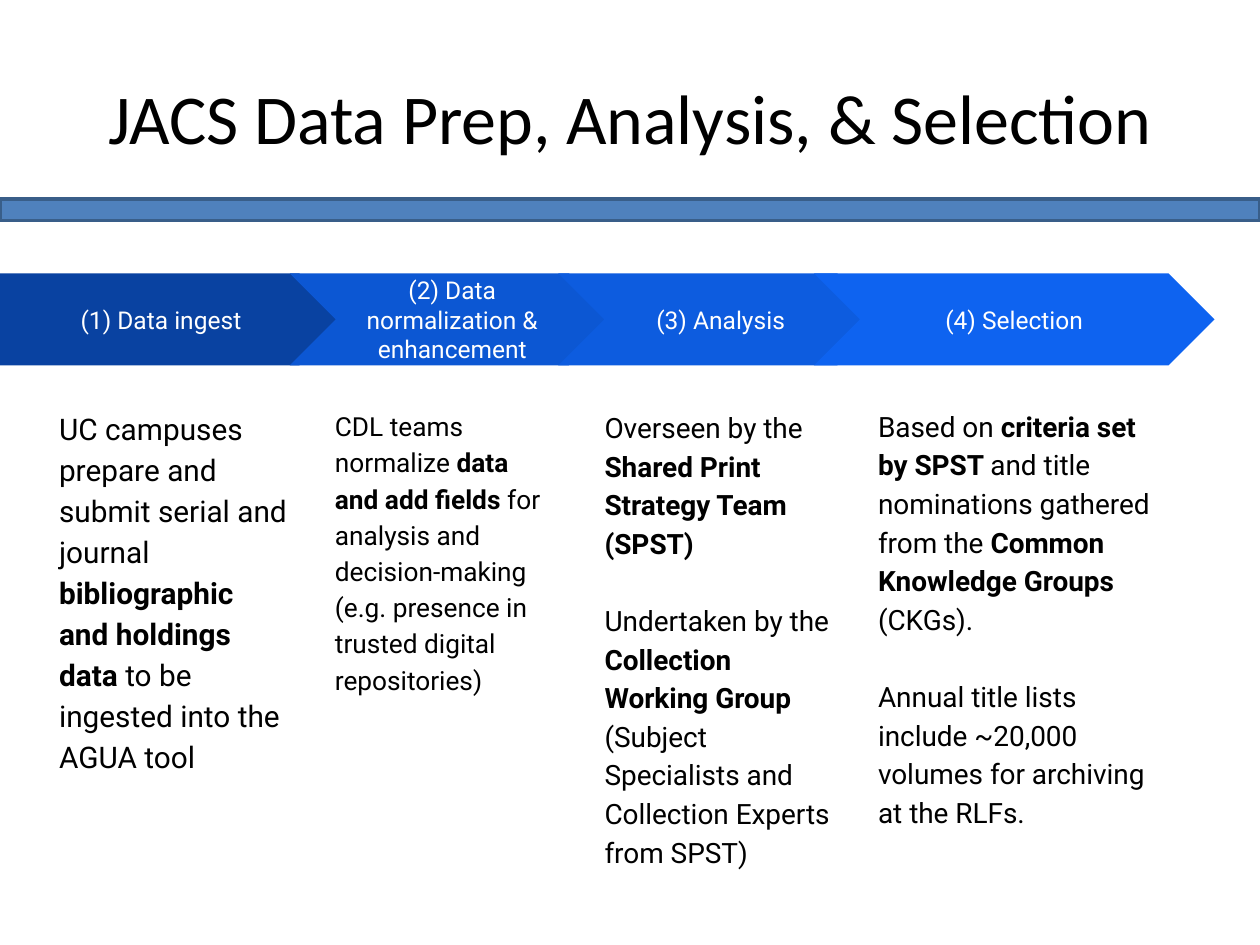
from pptx import Presentation
from pptx import util as u
from pptx.dml.color import RGBColor
from pptx.enum import shapes, text

THEME = {
    "title": {"name": "Calibri", "size": u.Pt(40), "color": "000000"},
    "step": {"name": "Roboto", "size": u.Pt(14), "color": "FFFFFF"},
    "body": {"name": "Roboto", "color": "000000"},
    "band": "4F81BD",
    "band_line": "395E89",
}
ARROW_TOP, ARROW_HEIGHT = 2.17, 0.73
PARAGRAPH_GAP = u.Pt(22)

# Each step: arrow (left, width, fill), text box (left, top, width, height), size, paragraphs.
# Within a paragraph, every second piece of text is bold.
STEPS = [
    ("(1) Data ingest", (0, 2.74, "0942A1"), (0.37, 3.12, 2.01, 2.57), 17, [
        ["UC campuses prepare and submit serial and journal ",
         "bibliographic and holdings data",
         " to be ingested into the AGUA tool"]]),
    ("(2) Data normalization & enhancement", (2.3, 2.58, "0C57D3"), (2.56, 3.12, 1.89, 2.57), 15, [
        ["CDL teams normalize ", "data and add fields",
         " for analysis and decision-making (e.g. presence in trusted digital repositories)"]]),
    ("(3) Analysis", (4.43, 2.58, "0D5CDF"), (4.7, 3.12, 2.03, 2.57), 16, [
        ["Overseen by the ", "Shared Print Strategy Team (SPST)"],
        ["Undertaken by the ", "Collection Working Group ",
         "(Subject Specialists and Collection Experts from SPST)"]]),
    ("(4) Selection", (6.46, 3.18, "0E63F0"), (6.87, 3.11, 2.51, 3.7), 16, [
        ["Based on ", "criteria set by SPST ",
         "and title nominations gathered from the ",
         "Common Knowledge Groups", " (CKGs)."],
        ["Annual title lists include ~20,000 volumes for archiving at the RLFs."]]),
]


def format_font(font, values):
    for name, value in values.items():
        if name == "color":
            font.color.rgb = RGBColor.from_string(value)
        else:
            setattr(font, name, value)


def format_frame(frame, anchor, margin_y=0.1):
    values = {"word_wrap": True, "auto_size": text.MSO_AUTO_SIZE.NONE,
              "vertical_anchor": anchor,
              "margin_left": u.Inches(0.1), "margin_right": u.Inches(0.1),
              "margin_top": u.Inches(margin_y), "margin_bottom": u.Inches(margin_y)}
    for name, value in values.items():
        setattr(frame, name, value)


deck = Presentation()
deck.slide_width, deck.slide_height = u.Inches(10), u.Inches(7.5)
page = deck.slides.add_slide(deck.slide_layouts[5])

# Title
title = page.shapes.title
title.left, title.top = u.Inches(0.5), u.Inches(0.3)
title.width, title.height = u.Inches(9), u.Inches(1.25)
format_frame(title.text_frame, text.MSO_ANCHOR.MIDDLE, 0.05)
para = title.text_frame.paragraphs[0]
para.alignment = text.PP_ALIGN.CENTER
span = para.add_run()
span.text = "JACS Data Prep, Analysis, & Selection"
format_font(span.font, THEME["title"])

# Band under the title
band = page.shapes.add_shape(shapes.MSO_SHAPE.RECTANGLE, 0, u.Inches(1.58),
                             deck.slide_width, u.Inches(0.17))
band.shadow.inherit = False
band.fill.solid()
band.fill.fore_color.rgb = RGBColor.from_string(THEME["band"])
band.line.color.rgb = RGBColor.from_string(THEME["band_line"])
band.line.width = u.Pt(2)

# Process steps: an arrow with its description below
for number, (label, (left, width, fill), place, size, paragraphs) in enumerate(STEPS):
    kind = shapes.MSO_SHAPE.CHEVRON if number else shapes.MSO_SHAPE.PENTAGON
    arrow = page.shapes.add_shape(kind, u.Inches(left), u.Inches(ARROW_TOP),
                                  u.Inches(width), u.Inches(ARROW_HEIGHT))
    arrow.adjustments[0] = 0.5
    arrow.shadow.inherit = False
    arrow.fill.solid()
    arrow.fill.fore_color.rgb = RGBColor.from_string(fill)
    arrow.line.fill.background()
    format_frame(arrow.text_frame, text.MSO_ANCHOR.MIDDLE)
    para = arrow.text_frame.paragraphs[0]
    para.alignment = text.PP_ALIGN.CENTER
    span = para.add_run()
    span.text = label
    format_font(span.font, THEME["step"])

    box = page.shapes.add_textbox(*map(u.Inches, place))
    frame = box.text_frame
    format_frame(frame, text.MSO_ANCHOR.TOP)
    for index, pieces in enumerate(paragraphs):
        para = frame.add_paragraph() if index else frame.paragraphs[0]
        para.line_spacing = 1.15
        if index:
            para.space_before = PARAGRAPH_GAP
        for order, piece in enumerate(pieces):
            span = para.add_run()
            span.text = piece
            format_font(span.font, {**THEME["body"], "size": u.Pt(size),
                                    "bold": order % 2 == 1})

deck.save("out.pptx")
